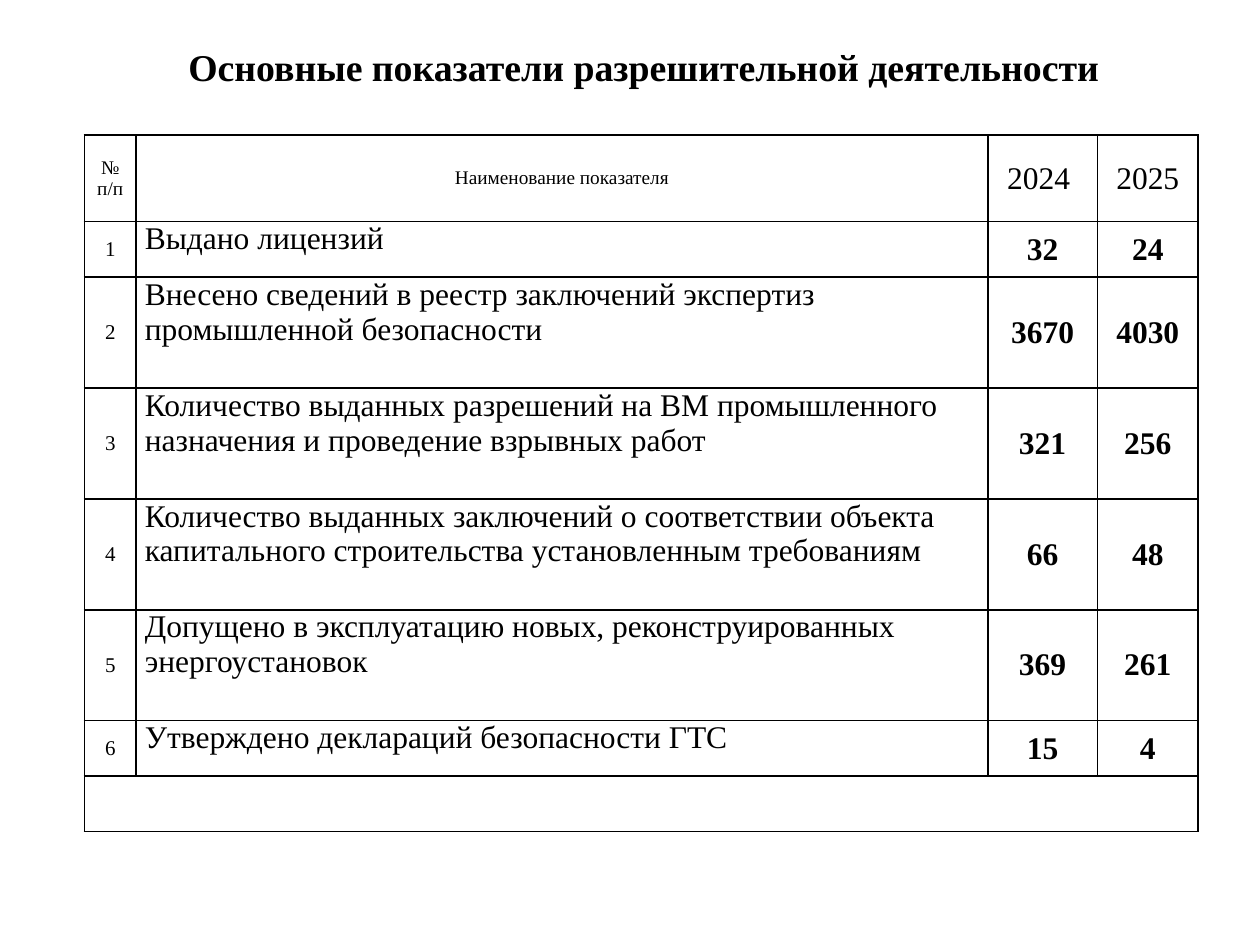
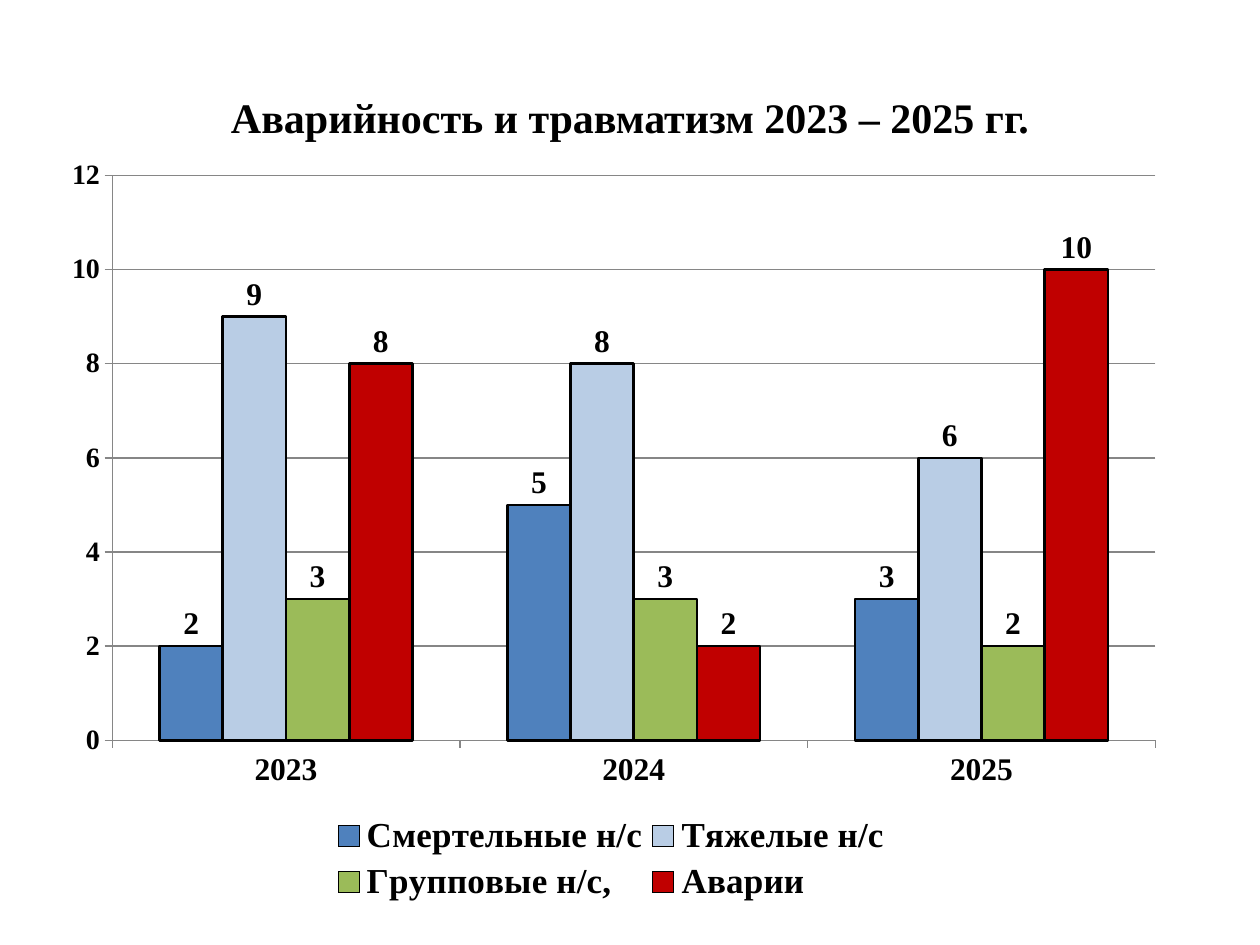
"""Build two slides: a table of licensing figures and a chart of accidents and injuries."""
import lxml.etree
import pptx
import pptx.chart.data
import pptx.dml.color
import pptx.enum.chart
import pptx.enum.text
import pptx.oxml
import pptx.oxml.ns
import pptx.util
from pptx.util import Inches

FONT = "Times New Roman"
BLACK = pptx.dml.color.RGBColor(0x00, 0x00, 0x00)
GREY = pptx.dml.color.RGBColor(0x86, 0x86, 0x86)
BLUE = pptx.dml.color.RGBColor(0x4F, 0x81, 0xBD)
PALE_BLUE = pptx.dml.color.RGBColor(0xB9, 0xCD, 0xE5)
GREEN = pptx.dml.color.RGBColor(0x9B, 0xBB, 0x59)
RED = pptx.dml.color.RGBColor(0xC0, 0x00, 0x00)
CENTER = pptx.enum.text.PP_ALIGN.CENTER
LEFT = pptx.enum.text.PP_ALIGN.LEFT
TOP = pptx.enum.text.MSO_ANCHOR.TOP
MIDDLE = pptx.enum.text.MSO_ANCHOR.MIDDLE
NAMESPACES = pptx.oxml.ns.nsdecls("a", "c")


def style_font(font, size, bold):
    font.name = FONT
    font.size = pptx.util.Pt(size)
    font.bold = bold
    font.color.rgb = BLACK


def make_layout(target, x, y, width, height):
    inner = f'<c:layoutTarget val="{target}"/>' if target else ""
    return pptx.oxml.parse_xml(
        f'<c:layout {NAMESPACES}><c:manualLayout>{inner}'
        f'<c:xMode val="edge"/><c:yMode val="edge"/><c:x val="{x}"/><c:y val="{y}"/>'
        f'<c:w val="{width}"/><c:h val="{height}"/></c:manualLayout></c:layout>')


deck = pptx.Presentation()
deck.slide_width = Inches(10)
deck.slide_height = Inches(7.5)

titles = [
    ("Основные показатели разрешительной деятельности", 21.6, 9.22, 0.77, TOP),
    ("Аварийность и травматизм 2023 – 2025 гг.", 24, 9, 1.25, MIDDLE),
]
pages = []
for text, size, width, height, anchor in titles:
    page = deck.slides.add_slide(deck.slide_layouts[6])
    box = page.shapes.add_textbox(Inches(0.5), Inches(0.3), Inches(width), Inches(height))
    box.text_frame.word_wrap = True
    box.text_frame.vertical_anchor = anchor
    para = box.text_frame.paragraphs[0]
    para.alignment = CENTER
    span = para.add_run()
    span.text = text
    style_font(span.font, size, True)
    pages.append(page)
table_page, chart_page = pages

rows = [
    ("№ п/п", "Наименование показателя", "2024 ", "2025"),
    ("1", "Выдано лицензий", "32", "24"),
    ("2", "Внесено сведений в реестр заключений экспертиз промышленной безопасности", "3670", "4030"),
    ("3", "Количество выданных разрешений на ВМ промышленного назначения и проведение взрывных работ",
     "321", "256"),
    ("4", "Количество выданных заключений о соответствии объекта капитального строительства "
     "установленным требованиям", "66", "48"),
    ("5", "Допущено в эксплуатацию новых, реконструированных энергоустановок", "369", "261"),
    ("6", "Утверждено деклараций безопасности ГТС", "15", "4"),
    ("", "", "", ""),
]
column_widths = [0.41, 6.76, 0.87, 0.8]
row_heights = [0.69, 0.44, 0.88, 0.88, 0.88, 0.88, 0.44, 0.44]
header_sizes = [11, 11, 18, 18]
body_sizes = [12, 18, 18, 18]

table = table_page.shapes.add_table(
    len(rows), len(column_widths), Inches(0.67), Inches(1.07), Inches(8.83), Inches(5.51)).table
table.first_row = False
table.horz_banding = False
for column, width in zip(table.columns, column_widths):
    column.width = Inches(width)
for row, height in zip(table.rows, row_heights):
    row.height = Inches(height)

for row_number, texts in enumerate(rows):
    is_header = row_number == 0
    for column_number, text in enumerate(texts):
        cell = table.cell(row_number, column_number)
        is_name = column_number == 1 and not is_header
        cell.margin_left = cell.margin_right = Inches(0.07)
        cell.margin_top = cell.margin_bottom = 0
        cell.vertical_anchor = TOP if is_name else MIDDLE
        properties = cell._tc.get_or_add_tcPr()
        for side in ("lnL", "lnR", "lnT", "lnB"):
            properties.append(pptx.oxml.parse_xml(
                f'<a:{side} {NAMESPACES} w="12700"><a:solidFill><a:srgbClr val="{BLACK}"/>'
                f'</a:solidFill></a:{side}>'))
        cell.fill.background()
        if text:
            para = cell.text_frame.paragraphs[0]
            para.alignment = LEFT if is_name else CENTER
            span = para.add_run()
            span.text = text
            size = (header_sizes if is_header else body_sizes)[column_number]
            style_font(span.font, size, column_number > 1 and not is_header)
last_row = len(rows) - 1
table.cell(last_row, 0).merge(table.cell(last_row, len(column_widths) - 1))

series_rows = [
    ("Смертельные н/с", (2, 5, 3), BLUE),
    ("Тяжелые н/с", (9, 8, 6), PALE_BLUE),
    ("Групповые н/с, ", (3, 3, 2), GREEN),
    ("Аварии", (8, 2, 10), RED),
]
chart_data = pptx.chart.data.CategoryChartData()
chart_data.categories = ["2023", "2024", "2025"]
for name, values, color in series_rows:
    chart_data.add_series(name, values)
chart = chart_page.shapes.add_chart(
    pptx.enum.chart.XL_CHART_TYPE.COLUMN_CLUSTERED,
    Inches(0.35), Inches(1.15), Inches(9), Inches(6.06), chart_data).chart
chart.has_title = False
chart.font.name = "Calibri"
chart.font.size = pptx.util.Pt(18)
chart.font.color.rgb = BLACK

plot = chart.plots[0]
plot.gap_width = 150
plot.overlap = 0
plot.vary_by_categories = False
for series, (name, values, color) in zip(plot.series, series_rows):
    series.format.fill.solid()
    series.format.fill.fore_color.rgb = color
    series.format.line.color.rgb = BLACK
    series.format.line.width = pptx.util.Pt(1.5)
    labels = series.data_labels
    labels.show_value = True
    labels.position = pptx.enum.chart.XL_LABEL_POSITION.OUTSIDE_END
    style_font(labels.font, 18, True)

for axis, size in ((chart.category_axis, 18), (chart.value_axis, 16)):
    axis.major_tick_mark = pptx.enum.chart.XL_TICK_MARK.OUTSIDE
    axis.minor_tick_mark = pptx.enum.chart.XL_TICK_MARK.NONE
    axis.format.line.color.rgb = GREY
    style_font(axis.tick_labels.font, size, True)
chart.value_axis.minimum_scale = 0
chart.value_axis.maximum_scale = 12
chart.value_axis.major_unit = 2
chart.value_axis.has_major_gridlines = True
chart.value_axis.major_gridlines.format.line.color.rgb = GREY

chart.has_legend = True
legend = chart.legend
legend.position = pptx.enum.chart.XL_LEGEND_POSITION.BOTTOM
legend.include_in_layout = False
style_font(legend.font, 20, True)

plot_area = chart._chartSpace.chart.plotArea
for element, position, layout in (
        (plot_area, 0, make_layout("inner", 0.06, 0.04, 0.92, 0.74)),
        (legend._element, 1, make_layout("", 0.25, 0.87, 0.5, 0.13))):
    for old_layout in element.findall(pptx.oxml.ns.qn("c:layout")):
        element.remove(old_layout)
    element.insert(position, layout)

deck.save("out.pptx")
